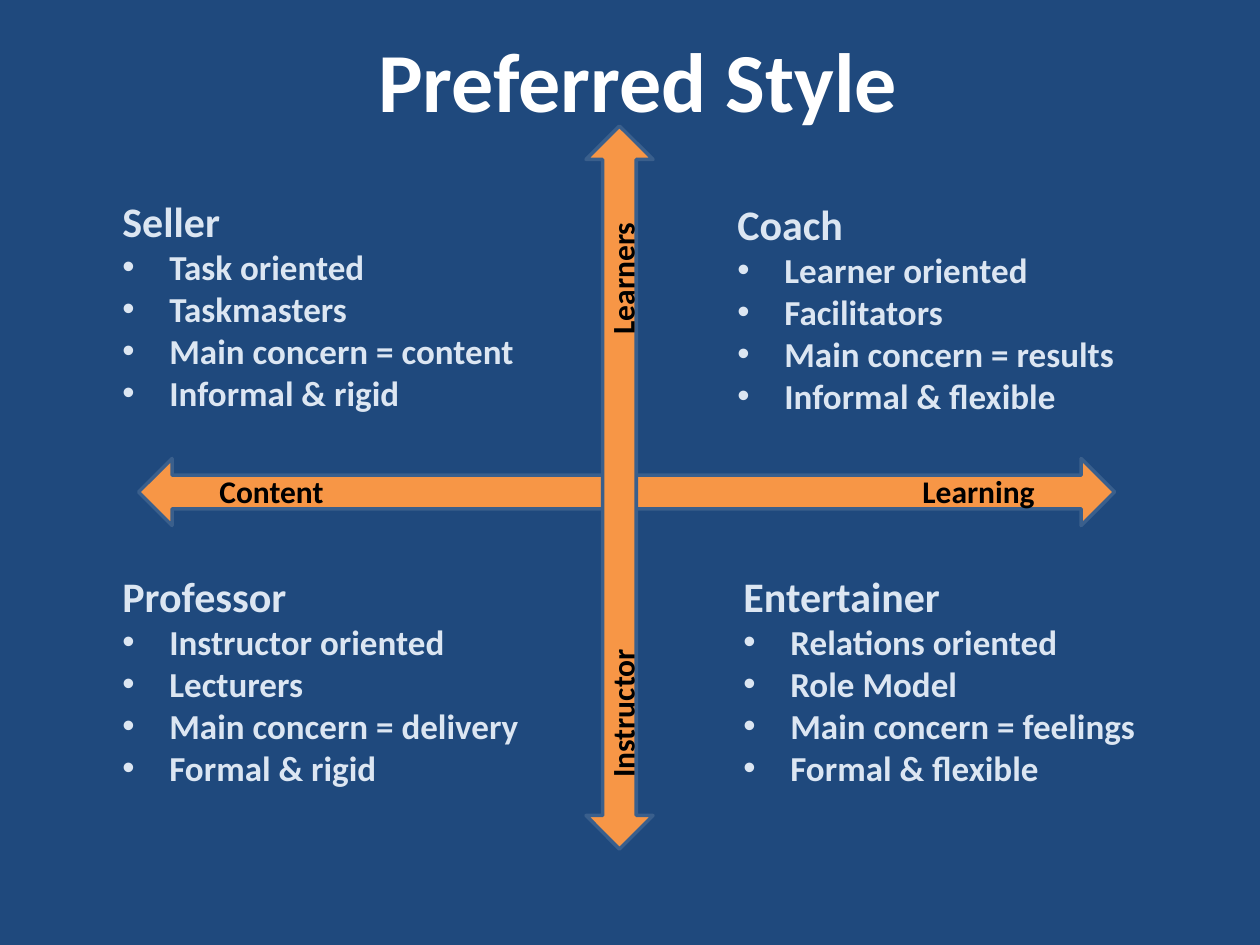
"""Build the Preferred Style slide: four trainer styles around two axes."""
import pptx
import pptx.dml.color
import pptx.enum.shapes
import pptx.enum.text
import pptx.oxml.ns
import pptx.util
from lxml import etree

PX = 914400 / 126
HUES = {"back": "1F497D", "title": "FFFFFF", "body": "DCE6F2",
        "label": "000000", "arrow": "F79646", "edge": "3A5F8C"}


def tint(name):
    return pptx.dml.color.RGBColor.from_string(HUES[name])


def write(shapes, box, lines, sizes, hue):
    text = shapes.add_textbox(*[round(n * PX) for n in box])
    frame = text.text_frame
    frame.word_wrap = True
    frame.text = "\n".join(lines)
    for i, para in enumerate(frame.paragraphs):
        font = para.runs[0].font
        font.name, font.bold = "Calibri", True
        font.size = pptx.util.Pt(sizes[min(i, 1)])
        font.color.rgb = tint(hue)
        if i:
            props = para._p.get_or_add_pPr()
            props.set("marL", str(round(47 * PX)))
            props.set("indent", str(round(-47 * PX)))
            face = etree.SubElement(props, pptx.oxml.ns.qn("a:buFont"))
            face.set("typeface", "Arial")
            mark = etree.SubElement(props, pptx.oxml.ns.qn("a:buChar"))
            mark.set("char", "•")
    return text


deck = pptx.Presentation()
deck.slide_width, deck.slide_height = round(1260 * PX), round(945 * PX)
slide = deck.slides.add_slide(deck.slide_layouts[6])
slide.background.fill.solid()
slide.background.fill.fore_color.rgb = tint("back")

title = write(slide.shapes, (71, 0, 1134, 158), ["Preferred Style"], [48, 48], "title")
title.text_frame.vertical_anchor = pptx.enum.text.MSO_ANCHOR.MIDDLE
title.text_frame.paragraphs[0].alignment = pptx.enum.text.PP_ALIGN.CENTER

styles = [
    ((110, 189, 474, 276), ["Seller", "Task oriented", "Taskmasters",
                            "Main concern = content", "Informal & rigid"]),
    ((731, 564, 425, 285), ["Entertainer", "Relations oriented", "Role Model",
                            "Main concern = feelings", "Formal & flexible"]),
    ((725, 192, 446, 276), ["Coach", "Learner oriented", "Facilitators",
                            "Main concern = results", "Informal & flexible"]),
    ((110, 564, 474, 285), ["Professor", "Instructor oriented", "Lecturers",
                            "Main concern = delivery", "Formal & rigid"]),
]
for box, lines in styles:
    write(slide.shapes, box, lines, [24, 20], "body")

axes = [
    ((593, 4, 67, 976), 90, 0, [("Content", (207, 466, 152, 50)),
                                ("Learning", (910, 466, 147, 50))]),
    ((586, 126, 67, 723), 0, 270, [("Instructor", (539, 682, 166, 50)),
                                   ("Learners", (539, 239, 166, 50))]),
]
for box, turn, tilt, labels in axes:
    group = slide.shapes.add_group_shape()
    arrow = group.shapes.add_shape(pptx.enum.shapes.MSO_SHAPE.UP_DOWN_ARROW,
                                   *[round(n * PX) for n in box])
    arrow.rotation = turn
    arrow.shadow.inherit = False
    arrow.fill.solid()
    arrow.fill.fore_color.rgb = tint("arrow")
    arrow.line.color.rgb = tint("edge")
    arrow.line.width = pptx.util.Pt(2)
    for word, place in labels:
        write(group.shapes, place, [word], [18, 18], "label").rotation = tilt

deck.save("out.pptx")
